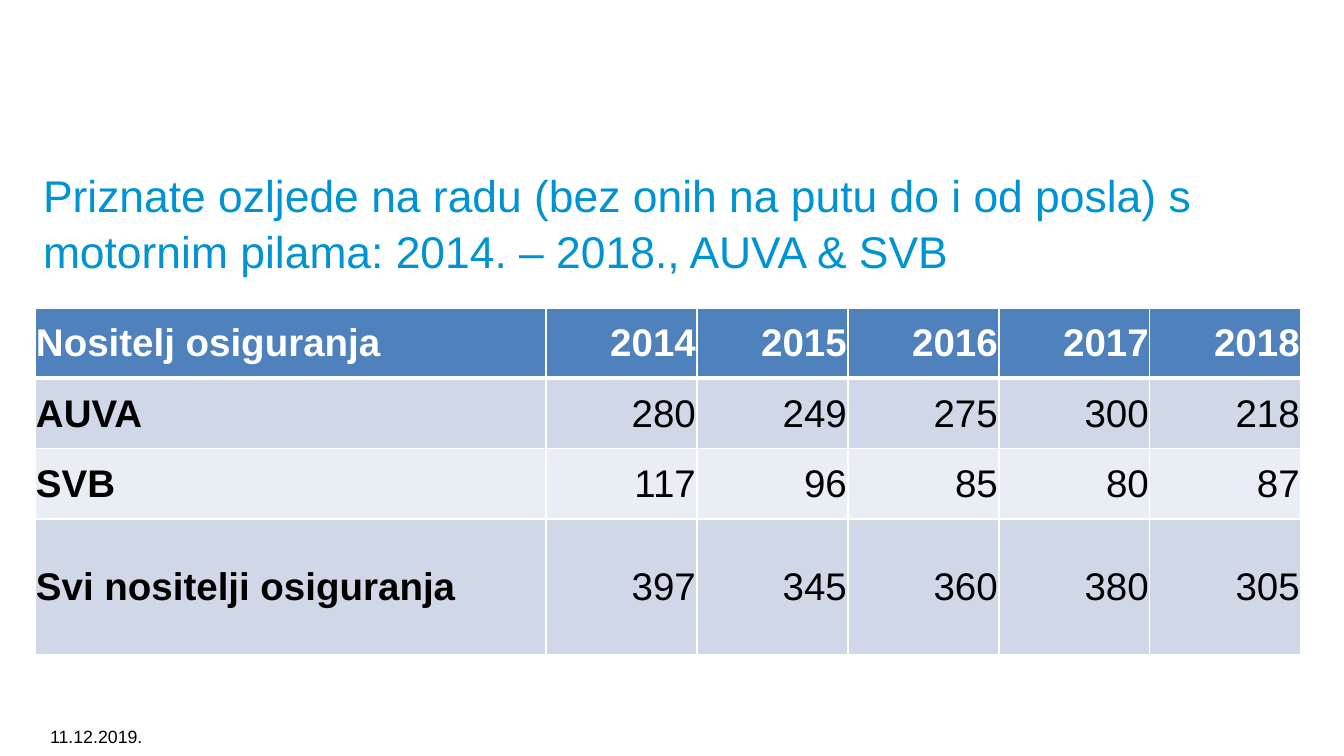
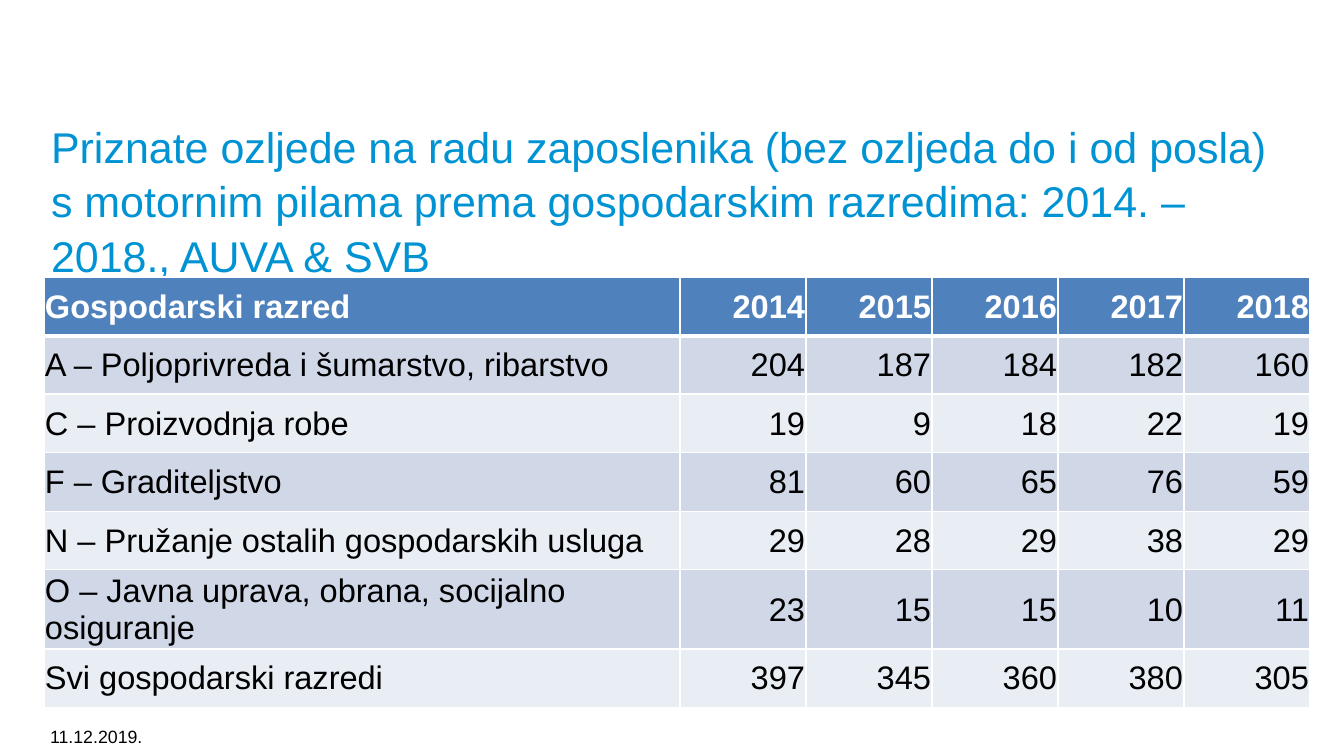
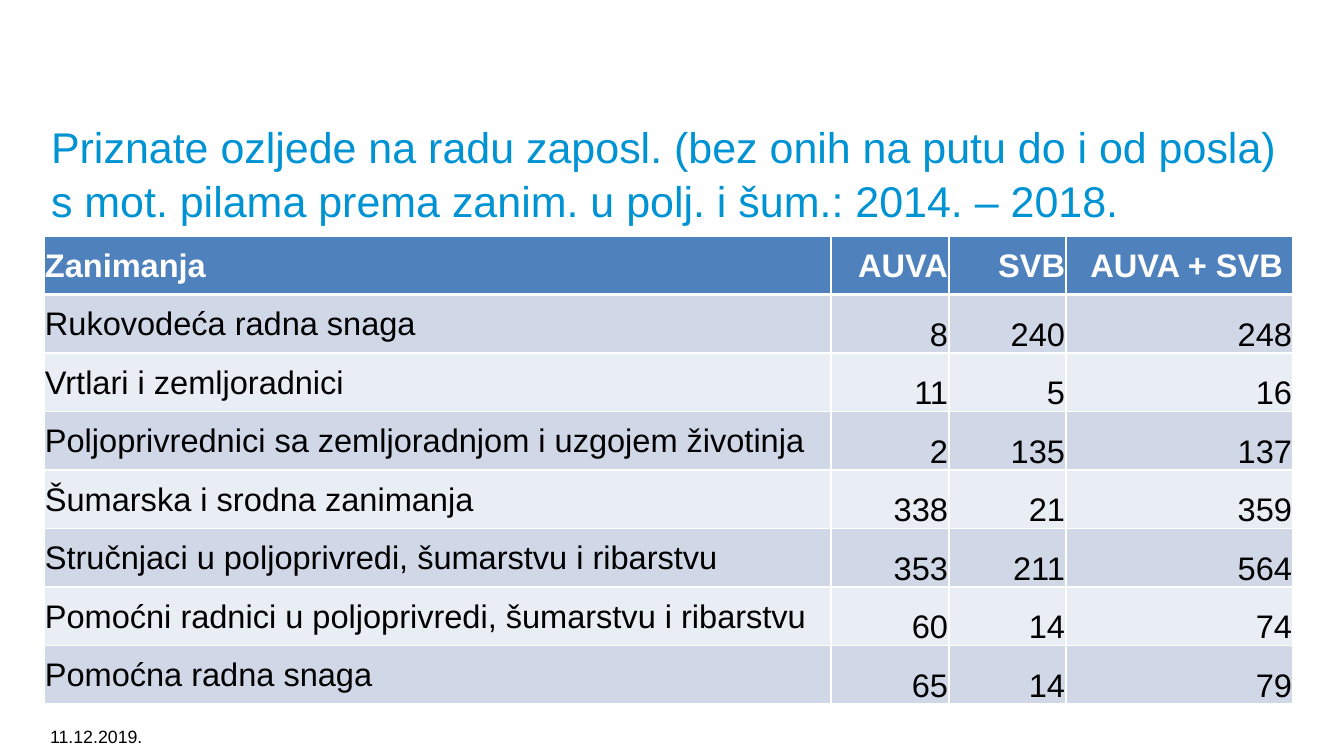
import dataclasses

import lxml.etree
import pptx
import pptx.dml.color
import pptx.enum.text
import pptx.oxml.ns
import pptx.util

RGB = pptx.dml.color.RGBColor
ALIGN = pptx.enum.text.PP_ALIGN
ANCHOR = pptx.enum.text.MSO_ANCHOR

SCALE = 8572.5  # EMU per px
FONT = "Arial"
DATE = "11.12.2019."
YEARS = ("2014", "2015", "2016", "2017", "2018")

WHITE = RGB(0xFF, 0xFF, 0xFF)
BLACK = RGB(0x00, 0x00, 0x00)
CYAN = RGB(0x00, 0x93, 0xD3)
BLUE = RGB(0x4F, 0x81, 0xBD)
BANDS = (RGB(0xD0, 0xD8, 0xE8), RGB(0xE9, 0xED, 0xF4))


@dataclasses.dataclass(frozen=True)
class Box:
    left: int
    top: int
    width: int
    height: int


@dataclasses.dataclass(frozen=True)
class Style:
    size: int
    color: RGB = BLACK
    bold: bool = False


@dataclasses.dataclass(frozen=True)
class Sheet:
    """One slide; foot is the last row's height when it differs."""
    title: str
    head: Box
    size: int
    grid: Box
    cols: tuple[int, ...]
    rows: tuple[tuple[str, ...], ...]
    text: int
    foot: int = 0
    bold: bool = False
    anchor: ANCHOR = ANCHOR.MIDDLE


HEAD = Box(43, 113, 1266, 94)
FOOT = Box(42, 716, 314, 40)

SHEETS = (
    Sheet(
        "Priznate ozljede na radu (bez onih na putu do i od posla) s motornim "
        "pilama: 2014. – 2018., AUVA & SVB",
        Box(35, 160, 1266, 94), 30,
        Box(35, 308, 1266, 347), (511,) + (151,) * 5,
        (
            ("Nositelj osiguranja", *YEARS),
            ("AUVA", "280", "249", "275", "300", "218"),
            ("SVB", "117", "96", "85", "80", "87"),
            ("Svi nositelji osiguranja", "397", "345", "360", "380", "305"),
        ),
        26, foot=136, bold=True,
    ),
    Sheet(
        "Priznate ozljede na radu zaposlenika (bez ozljeda do i od posla) s "
        "motornim pilama prema gospodarskim razredima: 2014. – 2018., AUVA & SVB",
        HEAD, 29,
        Box(44, 277, 1266, 410), (636,) + (126,) * 5,
        (
            ("Gospodarski razred", *YEARS),
            ("A – Poljoprivreda i šumarstvo, ribarstvo",
             "204", "187", "184", "182", "160"),
            ("C – Proizvodnja robe", "19", "9", "18", "22", "19"),
            ("F – Graditeljstvo", "81", "60", "65", "76", "59"),
            ("N – Pružanje ostalih gospodarskih usluga",
             "29", "28", "29", "38", "29"),
            ("O – Javna uprava, obrana, socijalno osiguranje",
             "23", "15", "15", "10", "11"),
            ("Svi gospodarski razredi", "397", "345", "360", "380", "305"),
        ),
        22,
    ),
    Sheet(
        "Priznate ozljede na radu zaposl. (bez onih na putu do i od posla) s "
        "mot. pilama prema zanim. u polj. i šum.: 2014. – 2018.",
        HEAD, 29,
        Box(44, 236, 1249, 468), (787, 118, 117, 227),
        (
            ("Zanimanja", "AUVA", "SVB", "AUVA + SVB "),
            ("Rukovodeća radna snaga", "8", "240", "248"),
            ("Vrtlari i zemljoradnici", "11", "5", "16"),
            ("Poljoprivrednici sa zemljoradnjom i uzgojem životinja",
             "2", "135", "137"),
            ("Šumarska i srodna zanimanja", "338", "21", "359"),
            ("Stručnjaci u poljoprivredi, šumarstvu i ribarstvu",
             "353", "211", "564"),
            ("Pomoćni radnici u poljoprivredi, šumarstvu i ribarstvu",
             "60", "14", "74"),
            ("Pomoćna radna snaga", "65", "14", "79"),
        ),
        22, anchor=ANCHOR.BOTTOM,
    ),
)


def px(size: float) -> pptx.util.Emu:
    return pptx.util.Emu(round(size * SCALE))


def place(box: Box) -> tuple[pptx.util.Emu, ...]:
    return tuple(px(size) for size in dataclasses.astuple(box))


def write(frame, text: str, style: Style, align: ALIGN = ALIGN.LEFT):
    """Add one styled run to the first paragraph and return the paragraph."""
    para = frame.paragraphs[0]
    para.alignment = align
    run = para.add_run()
    run.text = text
    run.font.name = FONT
    run.font.size = pptx.util.Pt(style.size)
    run.font.bold = style.bold
    run.font.color.rgb = style.color
    return para


def add_title(slide, sheet: Sheet) -> None:
    title = slide.shapes.title
    title.left, title.top, title.width, title.height = place(sheet.head)
    frame = title.text_frame
    frame.word_wrap = True
    frame.auto_size = pptx.enum.text.MSO_AUTO_SIZE.NONE
    frame.vertical_anchor = ANCHOR.TOP
    frame.margin_left = px(8)
    para = write(frame, sheet.title, Style(sheet.size, CYAN))
    para.line_spacing = 1.05


def add_date(slide) -> None:
    frame = slide.shapes.add_textbox(*place(FOOT)).text_frame
    frame.word_wrap = True
    frame.vertical_anchor = ANCHOR.MIDDLE
    frame.margin_left = px(8)
    write(frame, DATE, Style(12))


def edge(cell, row: int) -> None:
    """Draw white cell borders, thick between the header and the body."""
    props = cell._tc.get_or_add_tcPr()
    wide = {"lnT": row == 1, "lnB": row == 0}
    for spot, tag in enumerate(("lnL", "lnR", "lnT", "lnB")):
        line = lxml.etree.Element(pptx.oxml.ns.qn(f"a:{tag}"))
        line.set("w", str(pptx.util.Pt(3 if wide.get(tag) else 1)))
        fill = lxml.etree.SubElement(line, pptx.oxml.ns.qn("a:solidFill"))
        tint = lxml.etree.SubElement(fill, pptx.oxml.ns.qn("a:srgbClr"))
        tint.set("val", str(WHITE))
        props.insert(spot, line)


def fill_cell(cell, sheet: Sheet, row: int, col: int) -> None:
    top, label = row == 0, col == 0
    cell.margin_left = cell.margin_right = cell.margin_top = px(1)
    cell.margin_bottom = 0
    cell.vertical_anchor = ANCHOR.MIDDLE if top or label else sheet.anchor
    cell.fill.solid()
    cell.fill.fore_color.rgb = BLUE if top else BANDS[(row - 1) % 2]
    edge(cell, row)
    style = Style(sheet.text, WHITE if top else BLACK,
                  top or (label and sheet.bold))
    write(cell.text_frame, sheet.rows[row][col], style,
          ALIGN.LEFT if label else ALIGN.RIGHT)


def add_grid(slide, sheet: Sheet) -> None:
    count = len(sheet.rows)
    table = slide.shapes.add_table(
        count, len(sheet.cols), *place(sheet.grid)).table
    table.first_row = table.horz_banding = False
    for col, width in zip(table.columns, sheet.cols):
        col.width = px(width)
    if sheet.foot:
        step = (sheet.grid.height - sheet.foot) / (count - 1)
        for row in table.rows:
            row.height = px(step)
        table.rows[count - 1].height = px(sheet.foot)
    for row in range(count):
        for col in range(len(sheet.cols)):
            fill_cell(table.cell(row, col), sheet, row, col)


def main() -> None:
    deck = pptx.Presentation()
    deck.slide_width, deck.slide_height = px(1344), px(756)
    for sheet in SHEETS:
        slide = deck.slides.add_slide(deck.slide_layouts[5])
        add_title(slide, sheet)
        add_date(slide)
        add_grid(slide, sheet)
    deck.save("out.pptx")


if __name__ == "__main__":
    main()
